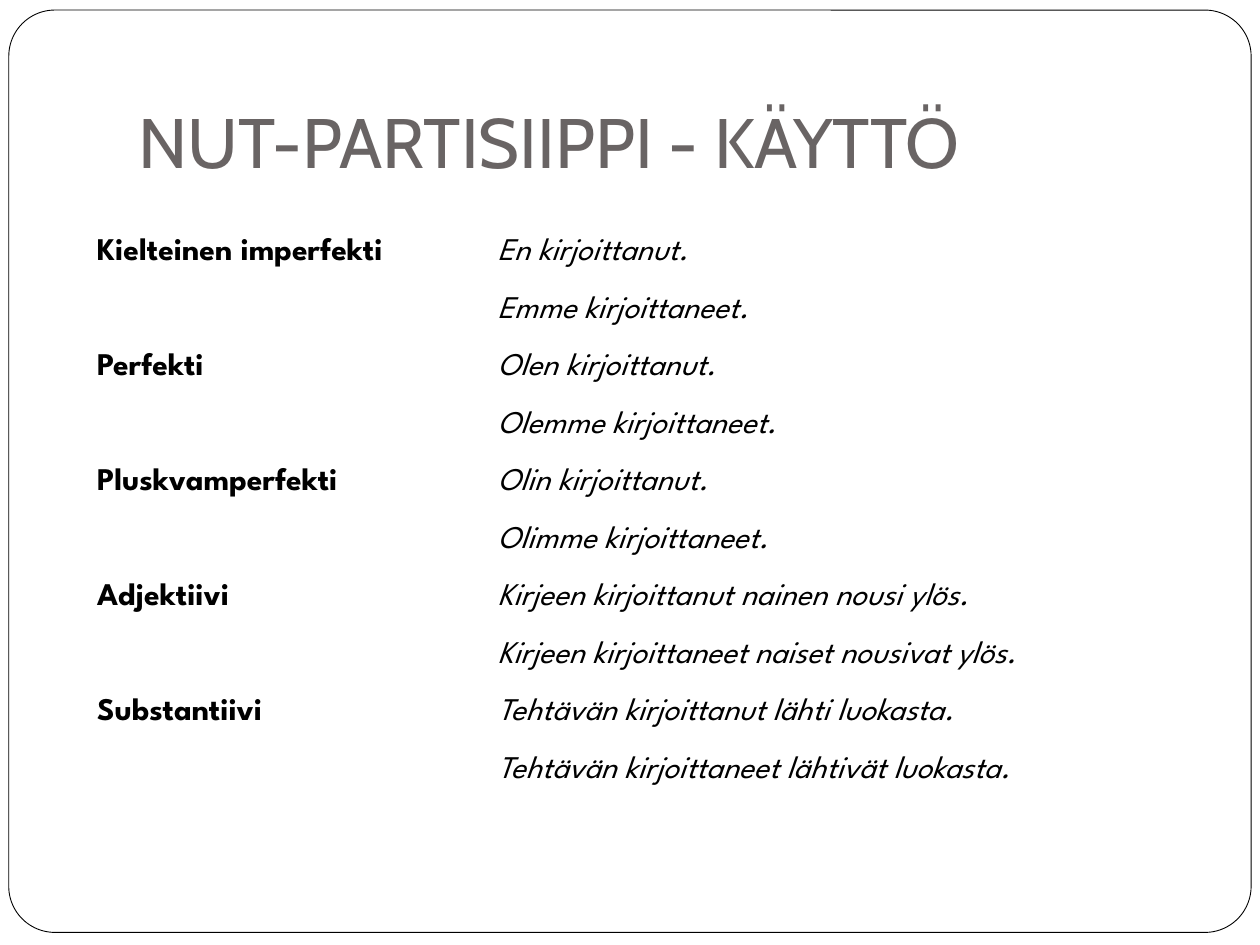
from pptx import Presentation
from pptx.dml.color import RGBColor
from pptx.enum.shapes import MSO_SHAPE as Shape
from pptx.enum.text import MSO_ANCHOR as Anchor
from pptx.util import Inches, Pt

TITLE = "NUT-PARTISIIPPI - KÄYTTÖ"
USES = [
    ("Kielteinen imperfekti", "En kirjoittanut.", "Emme kirjoittaneet."),
    ("Perfekti", "Olen kirjoittanut.", "Olemme kirjoittaneet."),
    ("Pluskvamperfekti", "Olin kirjoittanut.", "Olimme kirjoittaneet."),
    ("Adjektiivi", "Kirjeen kirjoittanut nainen nousi ylös.",
     "Kirjeen kirjoittaneet naiset nousivat ylös."),
    ("Substantiivi", "Tehtävän kirjoittanut lähti luokasta.",
     "Tehtävän kirjoittaneet lähtivät luokasta."),
]
COLS = (3.18, 5.65)
ROW = 0.457

HEAD = dict(name="Cabin", size=Pt(40), bold=False)
BODY = dict(name="League Spartan", size=Pt(18))
TERM = dict(BODY, bold=True, italic=False)
SAMPLE = dict(BODY, bold=False, italic=True)


def color(code):
    return RGBColor.from_string(code)


def write(frame, text, style, ink):
    para = frame.paragraphs[0]
    run = para.add_run()
    run.text = text
    for key, value in style.items():
        setattr(run.font, key, value)
    run.font.color.rgb = color(ink)


deck = Presentation()
deck.slide_width, deck.slide_height = Inches(10), Inches(7.5)
slide = deck.slides.add_slide(deck.slide_layouts[6])

# Rounded page frame
page = slide.shapes.add_shape(Shape.ROUNDED_RECTANGLE, Inches(0.07), Inches(0.08),
                              Inches(9.86), Inches(7.32))
page.adjustments[0] = 0.05
page.shadow.inherit = False
page.fill.solid()
page.fill.fore_color.rgb = color("FFFFFF")
page.line.color.rgb = color("000000")
page.line.width = Pt(0.5)

# Title
box = slide.shapes.add_textbox(Inches(1), Inches(0.3), Inches(8.5), Inches(1.25))
frame = box.text_frame
frame.word_wrap = True
frame.vertical_anchor = Anchor.BOTTOM
frame.margin_bottom = Inches(0.1)
write(frame, TITLE, HEAD, "696464")

# Table: each use takes two rows, singular then plural
count = 2 * len(USES)
table = slide.shapes.add_table(count, len(COLS), Inches(0.67), Inches(1.78),
                               Inches(sum(COLS)), Inches(ROW * count)).table
table.first_row = table.horz_banding = False
for col, width in zip(table.columns, COLS):
    col.width = Inches(width)
for cell in table.iter_cells():
    cell.fill.background()
    cell.vertical_anchor = Anchor.MIDDLE
for i, (term, *samples) in enumerate(USES):
    write(table.cell(2 * i, 0).text_frame, term, TERM, "000000")
    for j, sample in enumerate(samples):
        write(table.cell(2 * i + j, 1).text_frame, sample, SAMPLE, "000000")

deck.save("out.pptx")
